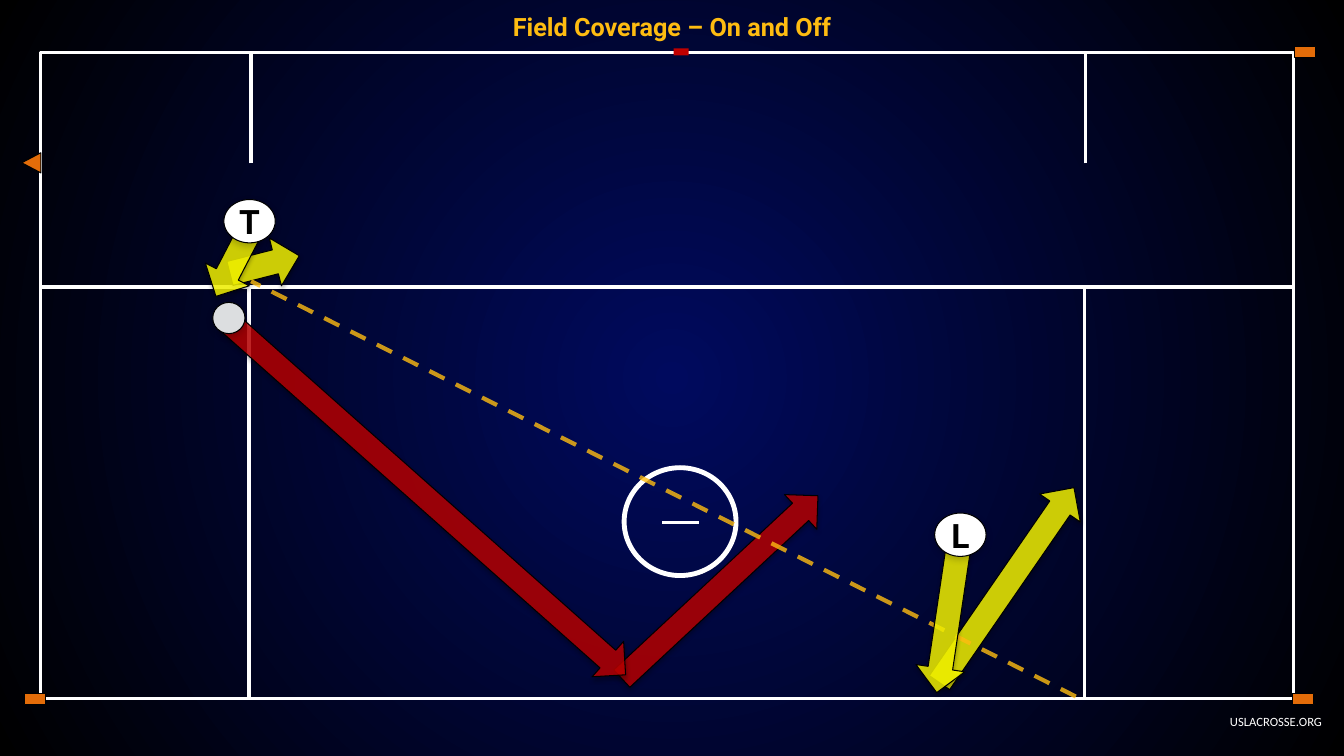
from dataclasses import dataclass

from lxml import etree
from pptx import Presentation
from pptx.dml.color import RGBColor
from pptx.enum import dml, shapes, text
from pptx.oxml import ns
from pptx.util import Inches, Pt

SHAPE = shapes.MSO_SHAPE


@dataclass(frozen=True)
class Theme:
    navy: str = "000A5E"
    black: str = "000000"
    white: str = "FFFFFF"
    gold: str = "FEBC11"
    red: str = "C00000"
    yellow: str = "FFFF00"
    orange: str = "E36C09"
    ball: str = "DCDEE0"
    heading_font: str = "Roboto"
    footer_font: str = "Calibri"
    title_size: float = 18
    player_size: float = 24
    footer_size: float = 9
    outline: float = 0.75
    field_line: float = 2.25
    circle_line: float = 3.5
    sight_line: float = 3
    opacity: int = 80


THEME = Theme()
# Opacity in percent, then blur and distance in points
ARROW_SHADOW = (35, 3.1, 1.8)
PLAYER_SHADOW = (20, 5, 2)


def apply(target, values):
    for name, value in values.items():
        setattr(target, name, value)


def add_element(parent, tag, **attributes):
    values = {name: str(value) for name, value in attributes.items()}
    return etree.SubElement(parent, ns.qn(tag), values)


def set_opacity(element, percent):
    for color in element.iter(ns.qn("a:srgbClr")):
        add_element(color, "a:alpha", val=percent * 1000)


def set_background(slide):
    """Radial gradient, navy in the centre and black at the edges."""
    fill = slide.background.fill
    fill.gradient()
    for stop, color in zip(fill.gradient_stops, (THEME.navy, THEME.black)):
        stop.color.rgb = RGBColor.from_string(color)
    gradient = next(slide.background._cSld.iter(ns.qn("a:gradFill")))
    gradient.remove(gradient.find(ns.qn("a:lin")))
    radial = add_element(gradient, "a:path", path="circle")
    add_element(radial, "a:fillToRect", l=50000, t=50000, r=50000, b=50000)


def add_figure(slide, kind, box, fill=None, line=THEME.black,
               width=THEME.outline, rotation=0, shadow=None):
    shape = slide.shapes.add_shape(kind, *map(Inches, box))
    shape.rotation = rotation
    shape.shadow.inherit = False
    if fill:
        shape.fill.solid()
        shape.fill.fore_color.rgb = RGBColor.from_string(fill)
    else:
        shape.fill.background()
    if line:
        shape.line.color.rgb = RGBColor.from_string(line)
        shape.line.width = Pt(width)
    else:
        shape.line.fill.background()
    if shadow:
        opacity, blur, distance = shadow
        effects = shape._element.spPr.find(ns.qn("a:effectLst"))
        outer = add_element(effects, "a:outerShdw", blurRad=Pt(blur), dist=Pt(distance),
                            dir=90 * 60000, rotWithShape=0)
        color = add_element(outer, "a:srgbClr", val=THEME.black)
        add_element(color, "a:alpha", val=opacity * 1000)
    return shape


def add_line(slide, start, end, color=THEME.white, width=THEME.field_line):
    line = slide.shapes.add_connector(shapes.MSO_CONNECTOR.STRAIGHT,
                                      *map(Inches, start + end))
    line.line.color.rgb = RGBColor.from_string(color)
    line.line.width = Pt(width)
    add_element(line._element.spPr, "a:effectLst")
    return line


def write(shape, words, size, color, font=THEME.heading_font, bold=True,
          align=text.PP_ALIGN.CENTER, margins=(0.1, 0.05), wrap=True):
    side, edge = map(Inches, margins)
    frame = shape.text_frame
    apply(frame, {"margin_left": side, "margin_right": side, "margin_top": edge,
                  "margin_bottom": edge, "word_wrap": wrap,
                  "vertical_anchor": text.MSO_ANCHOR.MIDDLE})
    paragraph = frame.paragraphs[0]
    paragraph.alignment = align
    run = paragraph.add_run()
    run.text = words
    apply(run.font, {"name": font, "size": Pt(size), "bold": bold})
    run.font.color.rgb = RGBColor.from_string(color)


def add_label(slide, box, words, size, color, **style):
    label = slide.shapes.add_textbox(*map(Inches, box))
    write(label, words, size, color, **style)


def add_field(slide):
    left, top, middle, bottom, right = 0.4, 0.52, 2.84, 6.93, 12.83
    zone_edges = (left, 2.47, 10.76, right)
    for start, end in reversed(list(zip(zone_edges, zone_edges[1:]))):
        add_figure(slide, SHAPE.RECTANGLE, (start, middle, end - start, bottom - middle),
                   line=THEME.white, width=THEME.field_line)
    add_figure(slide, SHAPE.OVAL, (6.19, 4.64, 1.11, 1.07),
               line=THEME.white, width=THEME.circle_line)
    add_line(slide, (6.57, 5.18), (6.93, 5.18))
    add_figure(slide, SHAPE.RECTANGLE, (left, top, right - left, 2.33),
               line=THEME.white, width=THEME.field_line)
    for x in (2.49, 10.77):
        add_line(slide, (x, 1.62), (x, top))


def add_markers(slide):
    add_figure(slide, SHAPE.RECTANGLE, (6.72, 0.44, 0.07, 0.15),
               THEME.red, line=None, rotation=90)
    add_figure(slide, SHAPE.ISOSCELES_TRIANGLE, (0.21, 1.52, 0.2, 0.19),
               THEME.orange, rotation=270)
    for x, y in ((12.89, 0.41), (12.87, 6.83), (0.29, 6.83)):
        add_figure(slide, SHAPE.RECTANGLE, (x, y, 0.11, 0.21), THEME.orange, rotation=90)


def add_run_arrow(slide, box, rotation, color):
    arrow = add_figure(slide, SHAPE.RIGHT_ARROW, box, color,
                       rotation=rotation, shadow=ARROW_SHADOW)
    set_opacity(arrow._element.spPr.find(ns.qn("a:solidFill")), THEME.opacity)


def add_sight_line(slide):
    line = add_line(slide, (10.67, 6.91), (2.49, 2.79), THEME.gold, THEME.sight_line)
    line.line.dash_style = dml.MSO_LINE.DASH
    set_opacity(line._element.spPr, THEME.opacity)


def add_player(slide, x, y, letter):
    player = add_figure(slide, SHAPE.OVAL, (x, y, 0.51, 0.43), THEME.white,
                        shadow=PLAYER_SHADOW)
    write(player, letter, THEME.player_size, THEME.black,
          margins=(0.07, 0.07), wrap=False)


def main():
    presentation = Presentation()
    apply(presentation, {"slide_width": Inches(13.33), "slide_height": Inches(7.5)})
    slide = presentation.slides.add_slide(presentation.slide_layouts[6])
    set_background(slide)
    add_label(slide, (12.08, 7.03, 1.13, 0.25), "USLACROSSE.ORG", THEME.footer_size,
              THEME.white, font=THEME.footer_font, bold=False,
              align=text.PP_ALIGN.RIGHT, wrap=False)
    add_field(slide)
    add_markers(slide)

    returns = (((2.27, 2.38, 0.71, 0.49), 345.7, THEME.yellow),
               ((5.81, 5.59, 2.66, 0.47), 317, THEME.red),
               ((8.81, 5.56, 2.35, 0.49), 304.6, THEME.yellow))
    approaches = (((1.95, 2.38, 0.71, 0.49), 117.4, THEME.yellow),
                  ((1.6, 4.71, 5.27, 0.47), 41.6, THEME.red),
                  ((8.63, 5.86, 1.55, 0.49), 98.5, THEME.yellow))
    for arrow in returns:
        add_run_arrow(slide, *arrow)
    add_sight_line(slide)
    for arrow in approaches:
        add_run_arrow(slide, *arrow)

    add_label(slide, (0, 0.05, 13.33, 0.42), "Field Coverage – On and Off",
              THEME.title_size, THEME.gold)
    add_player(slide, 9.27, 5.09, "L")
    add_player(slide, 2.22, 1.98, "T")
    add_figure(slide, SHAPE.OVAL, (2.11, 3, 0.32, 0.31), THEME.ball, shadow=PLAYER_SHADOW)
    presentation.save("out.pptx")


if __name__ == "__main__":
    main()
